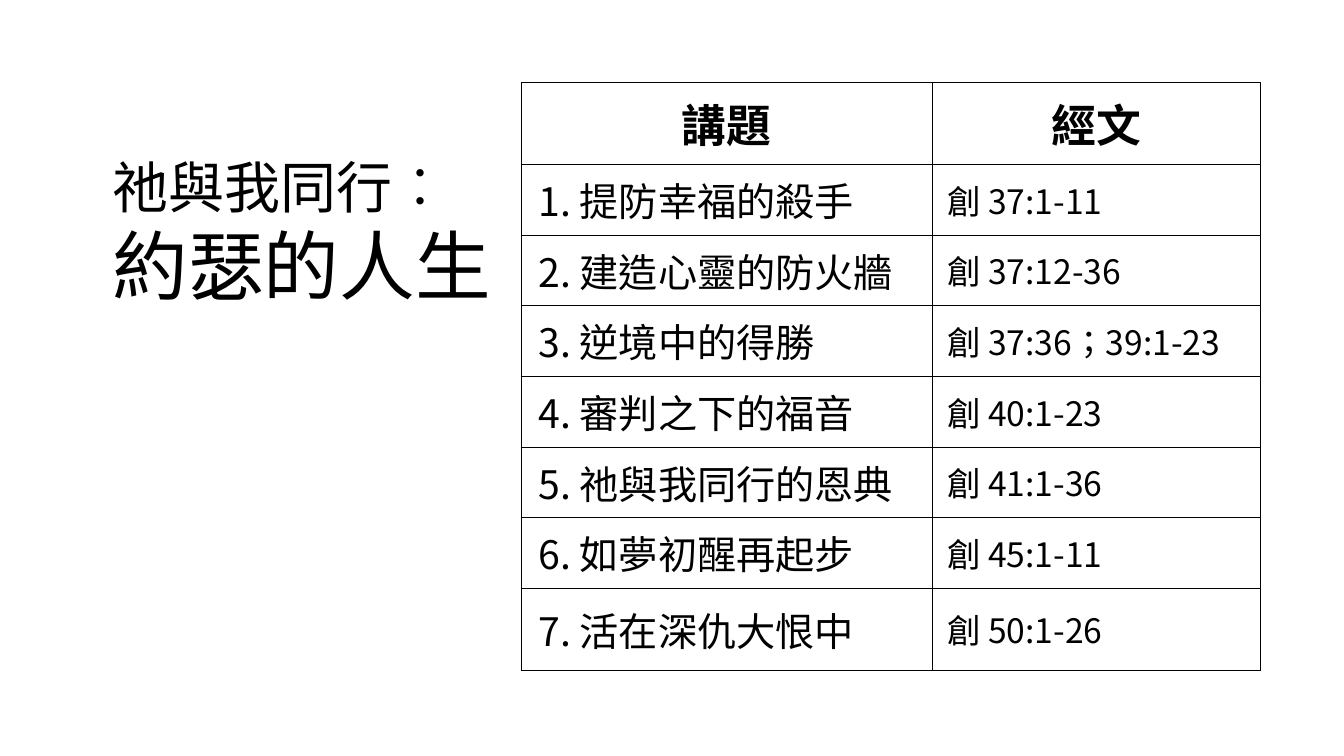
from dataclasses import dataclass

from lxml import etree
from pptx import Presentation
from pptx import util as u
from pptx.dml.color import RGBColor
from pptx.enum import text
from pptx.oxml import ns


@dataclass(frozen=True)
class Theme:
    ink: RGBColor = RGBColor(0, 0, 0)
    table_font: str = "Noto Sans CJK JP"
    title_font: str = "Noto Sans CJK SC"
    language: str = "zh-TW"
    series_size: int = 40
    name_size: int = 54
    header_size: int = 32
    topic_size: int = 28
    scripture_size: int = 24
    border: float = 0.5


@dataclass(frozen=True)
class Sermon:
    topic: str
    scripture: str


@dataclass(frozen=True)
class CellStyle:
    size: int
    indent: float = 0
    bold: bool = False
    align: text.PP_ALIGN = text.PP_ALIGN.LEFT


THEME = Theme()
HEADER = CellStyle(THEME.header_size, bold=True, align=text.PP_ALIGN.CENTER)
TOPIC = CellStyle(THEME.topic_size, indent=0.44)
SCRIPTURE = CellStyle(THEME.scripture_size, indent=0.38)
COLUMN_WIDTHS = (10.36, 8.28)
END_ROW_HEIGHT, MIDDLE_ROW_HEIGHT = 2.06, 1.78

HEADINGS = Sermon("講題", "經文")
SERMONS = (
    Sermon("提防幸福的殺手", "創 37:1-11"),
    Sermon("建造心靈的防火牆", "創 37:12-36"),
    Sermon("逆境中的得勝", "創 37:36；39:1-23"),
    Sermon("審判之下的福音", "創 40:1-23"),
    Sermon("祂與我同行的恩典", "創 41:1-36"),
    Sermon("如夢初醒再起步", "創 45:1-11"),
    Sermon("活在深仇大恨中", "創 50:1-26"),
)


def format_run(run, font: str, size: int, bold: bool = False) -> None:
    run.font.size = u.Pt(size)
    run.font.bold = bold
    run.font.color.rgb = THEME.ink
    run.font.name = font
    properties = run._r.get_or_add_rPr()
    properties.set("lang", THEME.language)
    etree.SubElement(properties, ns.qn("a:ea"), typeface=font)


def draw_borders(cell) -> None:
    properties = cell._tc.get_or_add_tcPr()
    for side in ("a:lnL", "a:lnR", "a:lnT", "a:lnB"):
        line = etree.SubElement(properties, ns.qn(side), w=str(u.Pt(THEME.border)))
        fill = etree.SubElement(line, ns.qn("a:solidFill"))
        etree.SubElement(fill, ns.qn("a:srgbClr"), val=str(THEME.ink))


def fill_cell(cell, wording: str, style: CellStyle) -> None:
    draw_borders(cell)
    cell.fill.background()
    cell.margin_left = u.Cm(style.indent)
    cell.margin_right = cell.margin_top = cell.margin_bottom = 0
    cell.vertical_anchor = text.MSO_ANCHOR.MIDDLE
    cell.text_frame.text = wording
    paragraph = cell.text_frame.paragraphs[0]
    paragraph.alignment = style.align
    format_run(paragraph.runs[0], THEME.table_font, style.size, style.bold)


def add_sermon_table(slide) -> None:
    heights = [END_ROW_HEIGHT, *[MIDDLE_ROW_HEIGHT] * (len(SERMONS) - 1), END_ROW_HEIGHT]
    schedule = slide.shapes.add_table(
        len(heights), len(COLUMN_WIDTHS), u.Cm(13.13), u.Cm(2.08),
        u.Cm(sum(COLUMN_WIDTHS)), u.Cm(sum(heights)),
    ).table
    schedule.first_row = schedule.horz_banding = False
    for column, width in zip(schedule.columns, COLUMN_WIDTHS):
        column.width = u.Cm(width)
    for row, height in zip(schedule.rows, heights):
        row.height = u.Cm(height)

    fill_cell(schedule.cell(0, 0), HEADINGS.topic, HEADER)
    fill_cell(schedule.cell(0, 1), HEADINGS.scripture, HEADER)
    for number, sermon in enumerate(SERMONS, start=1):
        fill_cell(schedule.cell(number, 0), f"{number}. {sermon.topic}", TOPIC)
        fill_cell(schedule.cell(number, 1), sermon.scripture, SCRIPTURE)


def add_series_title(slide) -> None:
    title = slide.shapes.add_textbox(u.Cm(2.59), u.Cm(3.71), u.Cm(10.36), u.Cm(4.27)).text_frame
    title.word_wrap = True
    title.auto_size = text.MSO_AUTO_SIZE.SHAPE_TO_FIT_TEXT
    for wording, size in (("祂與我同行︰", THEME.series_size), ("約瑟的人生", THEME.name_size)):
        run = title.paragraphs[0].add_run()
        run.text = wording
        format_run(run, THEME.title_font, size)


def main() -> None:
    presentation = Presentation()
    presentation.slide_width, presentation.slide_height = u.Cm(33.87), u.Cm(19.05)
    slide = presentation.slides.add_slide(presentation.slide_layouts[6])
    add_sermon_table(slide)
    add_series_title(slide)
    presentation.save("out.pptx")


if __name__ == "__main__":
    main()
